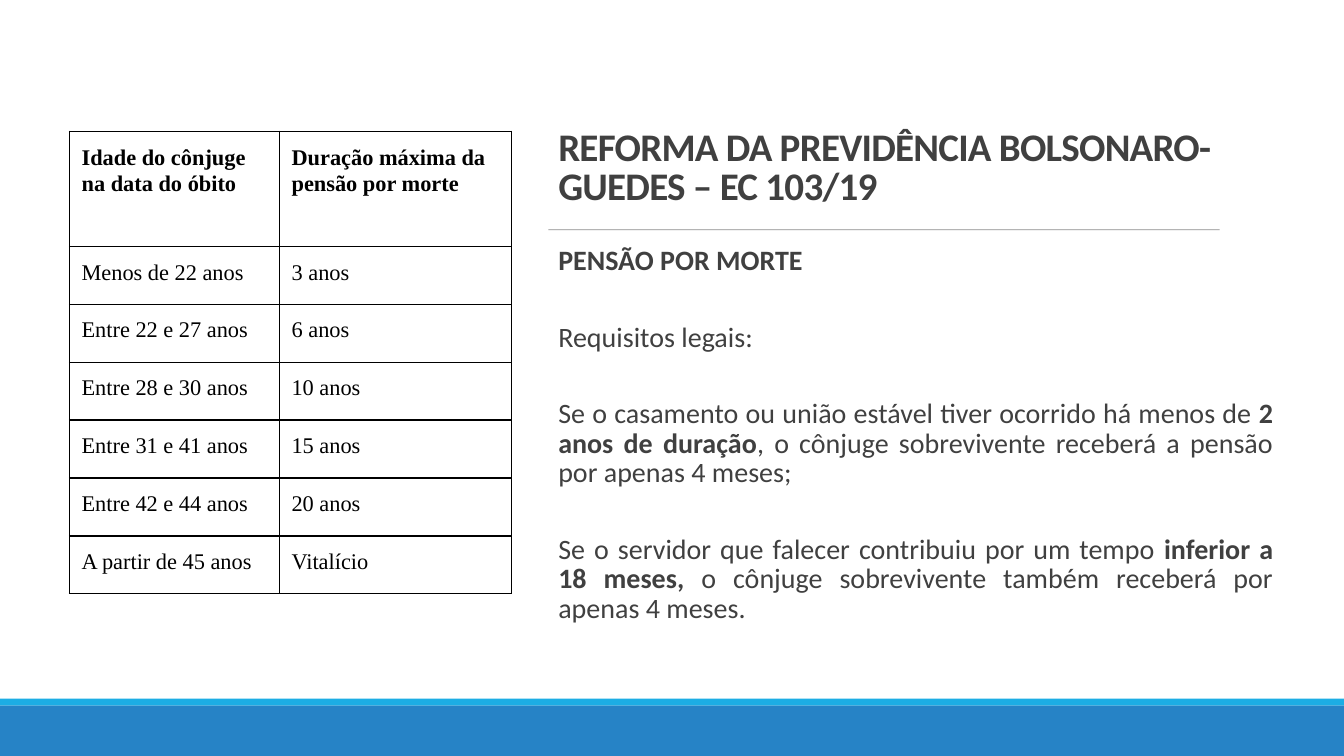
from lxml import etree
from pptx import Presentation
from pptx import util as u
from pptx.dml.color import RGBColor
from pptx.enum import shapes, text
from pptx.oxml import ns

COLORS = {"ink": "404040", "table": "000000", "rule": "808080",
          "accent": "1CADE4", "footer": "2683C6"}
WIDTH, HEIGHT = 960, 540

HEADINGS = ("Idade do cônjuge na data do óbito", "Duração máxima da pensão por morte")
DURATIONS = (
    ("Menos de 22 anos", "3 anos"),
    ("Entre 22 e 27 anos", "6 anos"),
    ("Entre 28 e 30 anos", "10 anos"),
    ("Entre 31 e 41 anos", "15 anos"),
    ("Entre 42 e 44 anos", "20 anos"),
    ("A partir de 45 anos", "Vitalício"),
)
# Each paragraph is a list of (words, bold) pieces.
REQUIREMENTS = (
    [("PENSÃO POR MORTE", True)],
    [("Requisitos legais:", False)],
    [("Se o casamento ou união estável tiver ocorrido há menos de ", False),
     ("2 anos de duração", True),
     (", o cônjuge sobrevivente receberá a pensão por apenas 4 meses;", False)],
    [("Se o servidor que falecer contribuiu por um tempo ", False),
     ("inferior a 18 meses,", True),
     (" o cônjuge sobrevivente também receberá por apenas 4 meses.", False)],
)


def rgb(name):
    return RGBColor.from_string(COLORS[name])


def add_xml(parent, tag, **attributes):
    return etree.SubElement(parent, ns.qn(tag), attributes)


class SlideBuilder:
    body_font = "Calibri"
    table_font = "Times New Roman"

    def __init__(self, slide):
        self.slide = slide

    def style(self, paragraph, font, size, color, bold=None):
        paragraph.font.name = font
        paragraph.font.size = u.Pt(size)
        paragraph.font.color.rgb = rgb(color)
        paragraph.font.bold = bold

    def band(self, top, height, color):
        """Draw a filled strip across the full slide width."""
        strip = self.slide.shapes.add_shape(
            shapes.MSO_SHAPE.RECTANGLE, 0, u.Pt(top), u.Pt(WIDTH), u.Pt(height))
        strip.shadow.inherit = False
        strip.fill.solid()
        strip.fill.fore_color.rgb = rgb(color)
        strip.line.fill.background()

    def rule(self, left, right, y):
        divider = self.slide.shapes.add_connector(
            shapes.MSO_CONNECTOR.STRAIGHT, u.Pt(left), u.Pt(y), u.Pt(right), u.Pt(y))
        divider.line.width = u.Pt(0.5)
        divider.line.color.rgb = rgb("rule")
        properties = divider._element.spPr
        add_xml(next(properties.iter(ns.qn("a:srgbClr"))), "a:alpha", val="90000")
        add_xml(properties, "a:effectLst")

    def text_frame(self, left, top, width, height, bottom_inset=3.6):
        box = self.slide.shapes.add_textbox(*map(u.Pt, (left, top, width, height)))
        frame = box.text_frame
        frame.word_wrap = True
        frame.margin_bottom = u.Pt(bottom_inset)
        return frame

    def title(self, words, left, top, width, height):
        frame = self.text_frame(left, top, width, height, bottom_inset=15)
        frame.vertical_anchor = text.MSO_ANCHOR.BOTTOM
        heading = frame.paragraphs[0]
        heading.text = words
        heading.line_spacing = 0.85
        self.style(heading, self.body_font, 27.9, "ink", True)
        heading.runs[0].font._element.set("spc", "-50")

    def body(self, paragraphs, left, top, width, height):
        frame = self.text_frame(left, top, width, height)
        frame.margin_right = 0
        for index, pieces in enumerate(paragraphs):
            paragraph = frame.paragraphs[0] if index == 0 else frame.add_paragraph()
            paragraph.line_spacing = 0.88
            paragraph.space_after = u.Pt(33.5)
            if len(pieces) > 1:
                paragraph.alignment = text.PP_ALIGN.JUSTIFY
            self.style(paragraph, self.body_font, 20, "ink")
            for words, bold in pieces:
                run = paragraph.add_run()
                run.text = words
                run.font.bold = bold

    def cell(self, cell, words, bold):
        cell.margin_left = cell.margin_right = u.Pt(8.64)
        cell.margin_top = cell.margin_bottom = u.Pt(8.64)
        paragraph = cell.text_frame.paragraphs[0]
        paragraph.text = words
        paragraph.line_spacing = 1.07
        self.style(paragraph, self.table_font, 16, "table", bold)
        properties = cell._tc.get_or_add_tcPr()
        for side in ("a:lnL", "a:lnR", "a:lnT", "a:lnB"):
            border = add_xml(properties, side, w=str(u.Pt(1)))
            fill = add_xml(border, "a:solidFill")
            add_xml(fill, "a:srgbClr", val=COLORS["table"])
        cell.fill.background()

    def table(self, rows, left, top, widths, header_height, row_height):
        heights = [header_height] + [row_height] * (len(rows) - 1)
        grid = self.slide.shapes.add_table(
            len(rows), len(widths), u.Pt(left), u.Pt(top),
            u.Pt(sum(widths)), u.Pt(sum(heights))).table
        grid.first_row = grid.horz_banding = False
        for column, width in zip(grid.columns, widths):
            column.width = u.Pt(width)
        for r, (values, height) in enumerate(zip(rows, heights)):
            grid.rows[r].height = u.Pt(height)
            for c, words in enumerate(values):
                self.cell(grid.cell(r, c), words, bold=r == 0)


def main():
    deck = Presentation()
    deck.slide_width, deck.slide_height = u.Pt(WIDTH), u.Pt(HEIGHT)
    page = SlideBuilder(deck.slides.add_slide(deck.slide_layouts[6]))
    page.title("REFORMA DA PREVIDÊNCIA BOLSONARO-GUEDES – EC 103/19",
               391.7, 49.7, 517.7, 114.5)
    page.rule(391.7, 871.2, 164.2)
    page.body(REQUIREMENTS, 391.7, 172.8, 517.7, 288.7)
    page.band(499, 5, "accent")
    page.band(504, 36, "footer")
    page.table((HEADINGS, *DURATIONS), 49.7, 93.8, (150, 165.5), 82.1, 41.4)
    deck.save("out.pptx")


if __name__ == "__main__":
    main()
